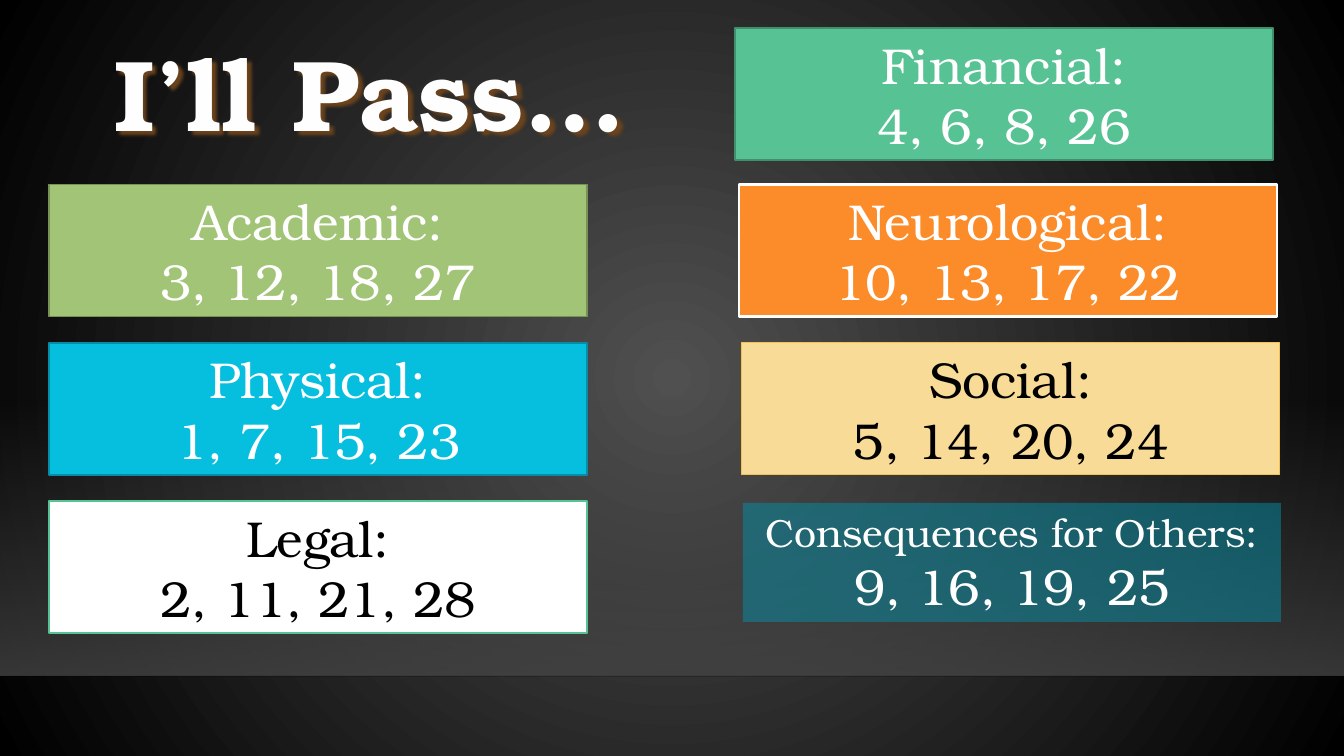
from lxml import etree
from pptx import Presentation
from pptx.dml.color import RGBColor
from pptx.enum.shapes import MSO_CONNECTOR, MSO_SHAPE
from pptx.enum.text import MSO_ANCHOR, PP_ALIGN
from pptx.oxml import parse_xml
from pptx.oxml.ns import nsdecls, qn
from pptx.util import Cm, Pt

RECTANGLE = MSO_SHAPE.RECTANGLE
STRAIGHT = MSO_CONNECTOR.STRAIGHT
CENTER = PP_ALIGN.CENTER
TOP, MIDDLE = MSO_ANCHOR.TOP, MSO_ANCHOR.MIDDLE

FONT = "TeX Gyre Bonum"
COLORS = {
    "glow": "505050", "black": "000000", "floor": "454545", "edge": "000001",
    "title": "FEFEFE", "title shadow": "6B431C", "white": "FFFFFF",
    "lime": "A2C476", "dark lime": "789157",
    "cyan": "06BFDE", "dark cyan": "048DA4",
    "green": "57C293", "dark green": "40906D",
    "orange": "FB8C29", "sand": "F7DB97", "gold": "F2C351", "teal": "058FA6",
}


def color(name):
    return RGBColor.from_string(COLORS[name])


def set_alpha(color_element, percent):
    alpha = etree.SubElement(color_element, qn("a:alpha"))
    alpha.set("val", str(percent * 1000))


presentation = Presentation()
presentation.slide_width = Cm(33.87)
presentation.slide_height = Cm(19.05)
slide = presentation.slides.add_slide(presentation.slide_layouts[6])

# Background: radial glow from the centre
background = slide.background.fill
background.gradient()
for stop, name in zip(background.gradient_stops, ("glow", "black")):
    stop.color.rgb = color(name)
for linear in list(slide.element.iter(qn("a:lin"))):
    linear.getparent().replace(linear, parse_xml(
        f'<a:path {nsdecls("a")} path="circle">'
        '<a:fillToRect l="50000" t="50000" r="50000" b="50000"/></a:path>'))

# Floor: band fading in downwards, with a faint edge
floor = slide.shapes.add_shape(RECTANGLE, 0, Cm(10.06), Cm(33.87), Cm(6.97))
floor.shadow.inherit = False
floor.line.fill.background()
floor.fill.gradient()
floor.fill.gradient_angle = 270
for stop in floor.fill.gradient_stops:
    stop.color.rgb = color("floor")
for color_element, percent in zip(floor.element.spPr.iter(qn("a:srgbClr")), (0, 80)):
    set_alpha(color_element, percent)

edge = slide.shapes.add_connector(STRAIGHT, 0, Cm(17.04), Cm(33.87), Cm(17.04))
edge.line.color.rgb = color("edge")
edge.line.width = Pt(1)
set_alpha(next(edge.element.spPr.iter(qn("a:srgbClr"))), 20)
etree.SubElement(edge.element.spPr, qn("a:effectLst"))

# Title with a thin outline and a brown shadow
title = slide.shapes.add_textbox(Cm(0.48), Cm(0.64), Cm(17.7), Cm(3.33))
title.text_frame.word_wrap = True
title.text_frame.vertical_anchor = TOP
paragraph = title.text_frame.paragraphs[0]
paragraph.alignment = CENTER
run = paragraph.add_run()
run.text = "I’ll Pass…"
run.font.name = FONT
run.font.size = Pt(72)
run.font.bold = True
run.font.color.rgb = color("title")
properties = run.font._element
properties.set("spc", "50")
properties.insert(0, parse_xml(
    f'<a:ln {nsdecls("a")} w="9525"><a:solidFill>'
    f'<a:srgbClr val="{COLORS["orange"]}"/></a:solidFill></a:ln>'))
title.element.spPr.append(parse_xml(
    f'<a:effectLst {nsdecls("a")}><a:outerShdw blurRad="12700" dist="38100" dir="2700000">'
    f'<a:srgbClr val="{COLORS["title shadow"]}"/></a:outerShdw></a:effectLst>'))

# Category tiles: left, top, height, fill, line, line width, text colour,
# heading, heading size, numbers
ROWS = [4.65 + 3.99 * row for row in range(3)]
TILES = [
    (1.24, ROWS[0], 3.33, "lime", "dark lime", 1.25, "white", "Academic:", 36, "3, 12, 18, 27"),
    (1.24, ROWS[1], 3.33, "cyan", "dark cyan", 1.25, "white", "Physical:", 36, "1, 7, 15, 23"),
    (1.24, ROWS[2], 3.33, "white", "green", 1.25, "black", "Legal:", 36, "2, 11, 21, 28"),
    (18.52, 0.71, 3.33, "green", "dark green", 1.25, "white", "Financial:", 36, "4, 6, 8, 26"),
    (18.62, ROWS[0], 3.33, "orange", "white", 1.75, "white", "Neurological:", 36, "10, 13, 17, 22"),
    (18.69, ROWS[1], 3.33, "sand", "gold", 0.75, "black", "Social:", 36, "5, 14, 20, 24"),
    (18.72, 12.67, 3, "teal", None, 0, "white", "Consequences for Others:", 28, "9, 16, 19, 25"),
]
for left, top, height, fill, line, width, ink, heading, heading_size, numbers in TILES:
    tile = slide.shapes.add_shape(RECTANGLE, Cm(left), Cm(top), Cm(13.56), Cm(height))
    tile.shadow.inherit = False
    tile.fill.solid()
    tile.fill.fore_color.rgb = color(fill)
    if line:
        tile.line.color.rgb = color(line)
        tile.line.width = Pt(width)
    else:
        tile.line.fill.background()
        set_alpha(next(tile.element.spPr.iter(qn("a:srgbClr"))), 50)
    frame = tile.text_frame
    frame.word_wrap = True
    frame.vertical_anchor = MIDDLE
    for index, (text, size) in enumerate(((heading, heading_size), (numbers, 36))):
        paragraph = frame.add_paragraph() if index else frame.paragraphs[0]
        paragraph.alignment = CENTER
        run = paragraph.add_run()
        run.text = text
        run.font.name = FONT
        run.font.size = Pt(size)
        run.font.color.rgb = color(ink)

presentation.save("out.pptx")
